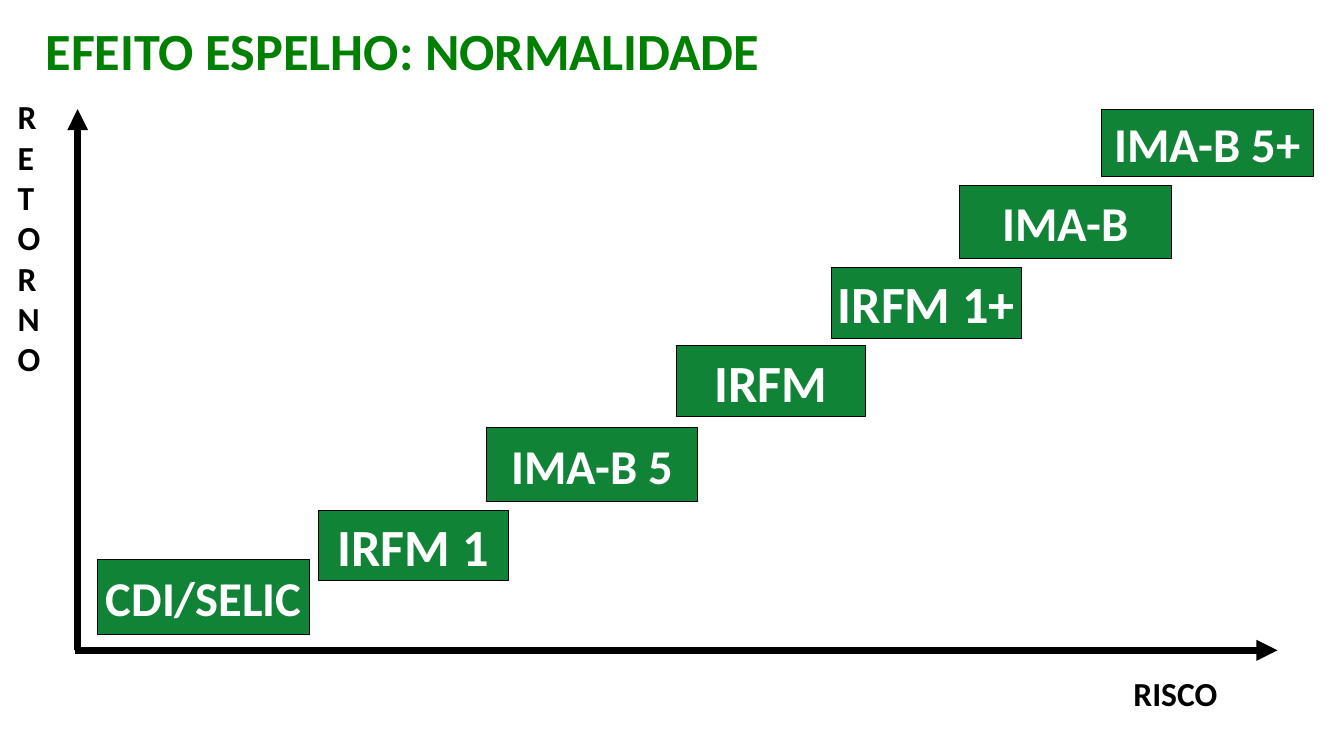
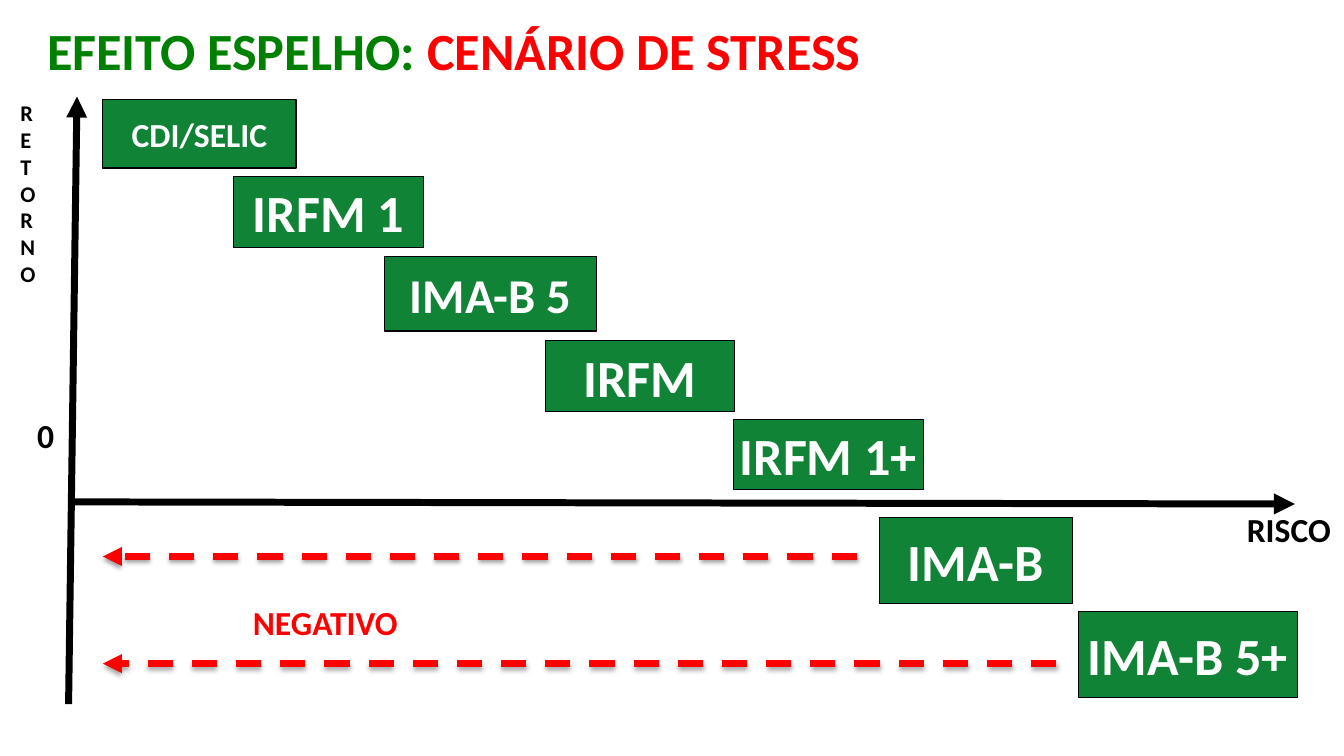
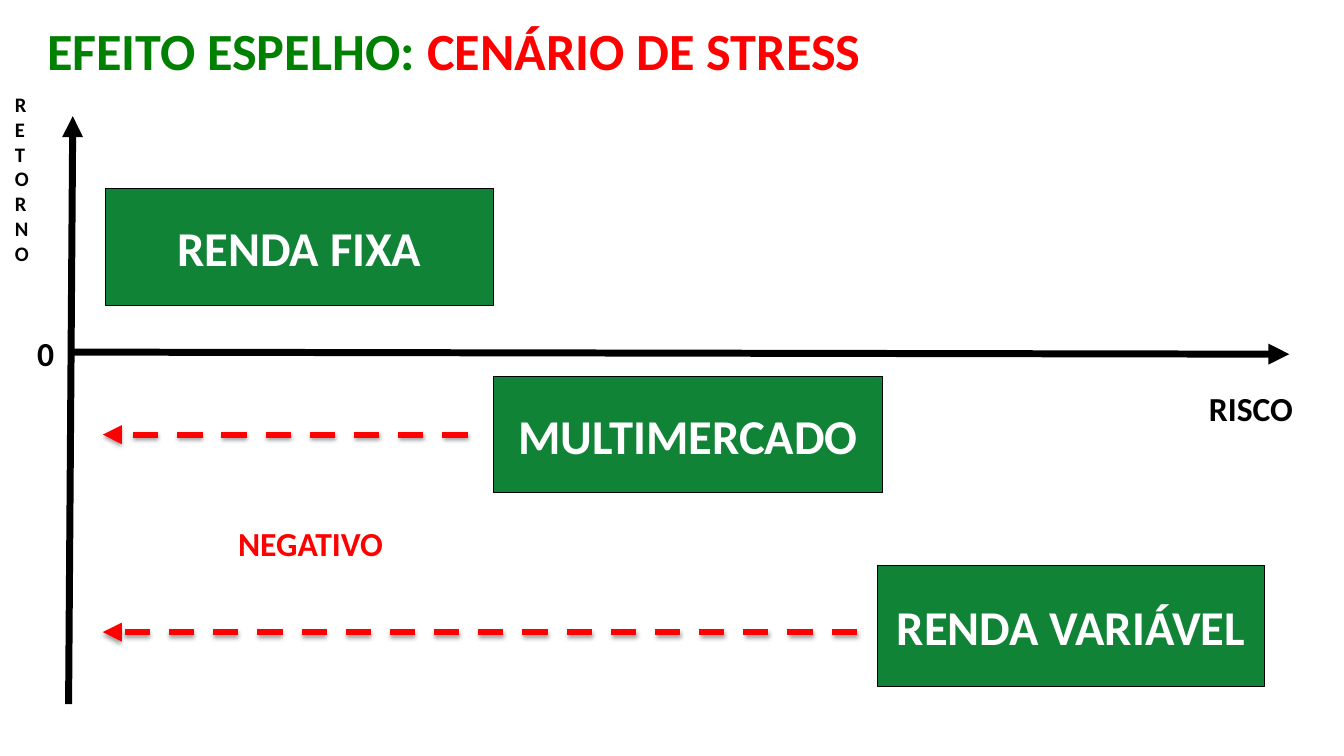
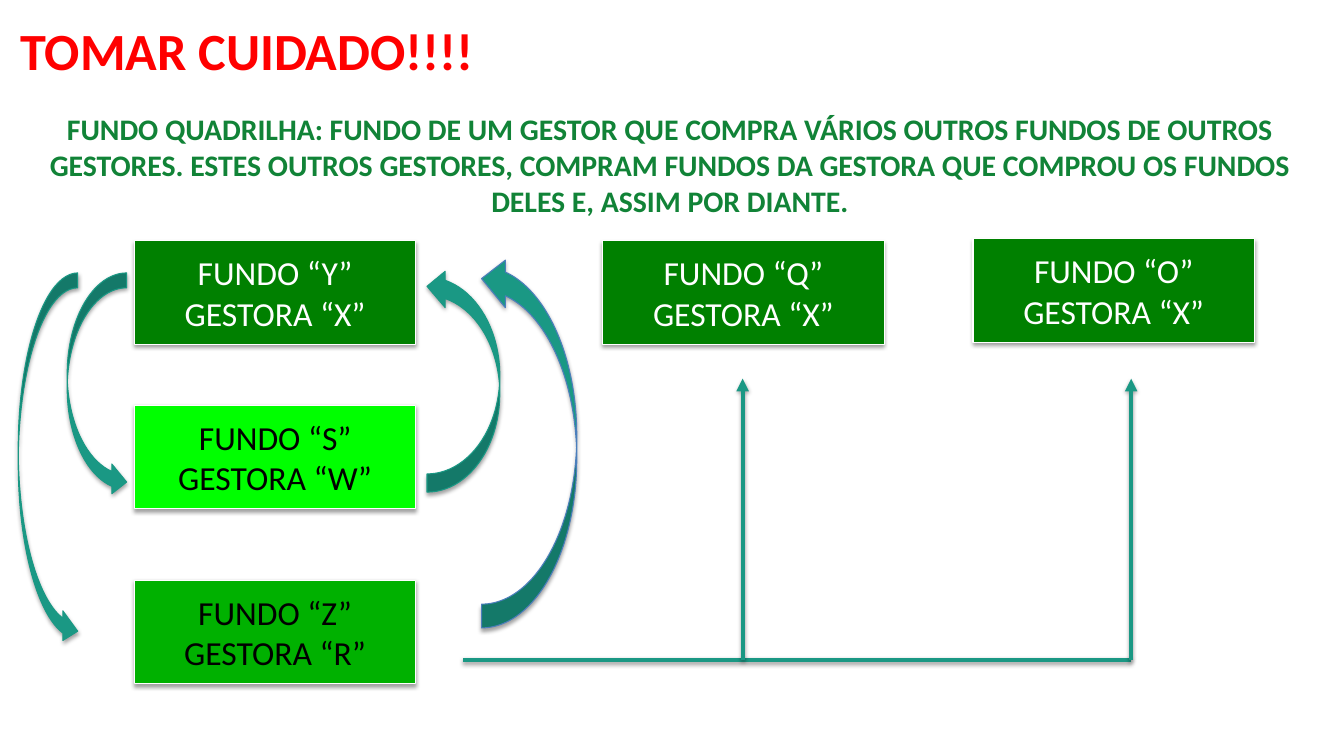
from dataclasses import dataclass
from typing import NamedTuple

from lxml import etree
from pptx import Presentation
from pptx.dml.color import RGBColor
from pptx.enum.dml import MSO_LINE
from pptx.enum.shapes import MSO_CONNECTOR, MSO_SHAPE
from pptx.enum.text import MSO_ANCHOR, MSO_AUTO_SIZE, PP_ALIGN
from pptx.oxml.ns import qn
from pptx.util import Pt

RECT, CURVE = MSO_SHAPE.RECTANGLE, MSO_SHAPE.CURVED_RIGHT_ARROW
STRAIGHT, DASH = MSO_CONNECTOR.STRAIGHT, MSO_LINE.DASH
LEFT, CENTER = PP_ALIGN.LEFT, PP_ALIGN.CENTER
TOP, MIDDLE = MSO_ANCHOR.TOP, MSO_ANCHOR.MIDDLE


@dataclass(frozen=True)
class Theme:
    font: str = "Calibri"
    big: float = 37.3
    mid: float = 34.7
    body: float = 24
    lead: float = 21.3
    small: float = 16
    tiny: float = 14.7
    black: str = "000000"
    white: str = "FFFFFF"
    red: str = "FF0000"
    green: str = "008000"
    card: str = "118337"
    lime: str = "00FF00"
    leaf: str = "00B100"
    teal: str = "1A9884"
    blue: str = "4B7EBC"


T = Theme()


class Box(NamedTuple):
    x: float
    y: float
    w: float
    h: float

    def sub(self, x, y, w, h):
        """Turn a place inside this box into a place on the slide."""
        return Box(self.x + x, self.y + y, w, h)


WIDE, SLIM = (151, 53), (135.5, 50.5)


def rgb(code):
    return RGBColor.from_string(code)


def pts(*vals):
    return [Pt(v) for v in vals]


def frame(shape, anchor, wrap):
    tf = shape.text_frame
    tf.auto_size = MSO_AUTO_SIZE.NONE
    tf.word_wrap, tf.vertical_anchor = wrap, anchor
    tf.margin_left = tf.margin_right = Pt(9.6)
    tf.margin_top = tf.margin_bottom = Pt(4.8)
    return tf


def style(para, size, color, align=LEFT, bold=True):
    para.alignment = align
    font = para.font
    font.name, font.size, font.bold = T.font, Pt(size), bold
    font.color.rgb = rgb(color)


def write(shape, text, size, color, align=LEFT, anchor=TOP, wrap=False, bold=True):
    tf = frame(shape, anchor, wrap)
    tf.text = text
    for para in tf.paragraphs:
        style(para, size, color, align, bold)


def label(slide, box, text, size=T.body, color=T.black, **kw):
    write(slide.shapes.add_textbox(*pts(*box)), text, size, color, **kw)


def effects(shape, shade):
    """Replace the theme's effects by a soft shadow, or by none."""
    props = shape._element.spPr
    for old in props.findall(qn("a:effectLst")):
        props.remove(old)
    effect = etree.SubElement(props, qn("a:effectLst"))
    if shade:
        drop = etree.SubElement(effect, qn("a:outerShdw"), blurRad=str(Pt(3.1)),
                                dist=str(Pt(1.7)), dir="5400000", rotWithShape="0")
        color = etree.SubElement(drop, qn("a:srgbClr"), val=T.black)
        etree.SubElement(color, qn("a:alpha"), val="36000")


def solid(slide, kind, box, fill, edge, shade=False):
    shape = slide.shapes.add_shape(kind, *pts(*box))
    shape.fill.solid()
    shape.fill.fore_color.rgb = rgb(fill)
    shape.line.color.rgb = rgb(edge)
    shape.line.width = Pt(0.75)
    effects(shape, shade)
    return shape


def line(slide, start, end, color, width, head=True, dash=False, shade=False):
    link = slide.shapes.add_connector(STRAIGHT, *pts(*start, *end))
    link.line.color.rgb = rgb(color)
    link.line.width = Pt(width)
    if dash:
        link.line.dash_style = DASH
    if head:
        stroke = link._element.spPr.find(qn("a:ln"))
        etree.SubElement(stroke, qn("a:tailEnd"), type="triangle")
    effects(link, shade)


def start_slide(deck, x, *parts):
    """Add a slide whose title is made of (text, color) parts."""
    slide = deck.slides.add_slide(deck.slide_layouts[5])
    title = slide.shapes.title
    title.left, title.top, title.width, title.height = pts(x, 8.6, 680, 54)
    para = frame(title, TOP, False).paragraphs[0]
    style(para, T.big, parts[0][1])
    for text, color in parts:
        run = para.add_run()
        run.text = text
        if color != parts[0][1]:
            run.font.color.rgb = rgb(color)
    return slide


def axes(slide, box, zero, lean=0, start=0, drop=0):
    """Draw both axes; zero is how far the risk axis lies below the top."""
    x, y, w, h = box
    line(slide, (x, y + h), (x + lean, y), T.black, 5)
    line(slide, (x + start, y + zero), (x + w, y + zero + drop), T.black, 5)


def names(slide, box, gain, size, risk):
    """Name the return axis, letter under letter, and the risk axis."""
    label(slide, box.sub(*gain, 34, size * 8.7 + 10), "\n".join("RETORNO"), size)
    label(slide, box.sub(*risk, 78, 38), "RISCO")


def cards(slide, box, items):
    for text, x, y, (w, h), size in items:
        card = solid(slide, RECT, box.sub(x, y, w, h), T.card, T.black)
        write(card, text, size, T.white, CENTER, MIDDLE)


def losses(slide, box, zero, word, arrows):
    """Mark the zero level and the dashed arrows of the negative part."""
    label(slide, box.sub(-32, zero, 30, 38), "0")
    label(slide, box.sub(*word, 294, 38), "NEGATIVO", color=T.red)
    for far, y in arrows:
        line(slide, (box.x + far, box.y + y), (box.x + 24.5, box.y + y),
             T.red, 4.5, dash=True, shade=True)


def normal(deck):
    slide = start_slide(deck, 23, ("EFEITO ESPELHO: NORMALIDADE", T.green))
    plot = Box(55.5, 78, 857, 386.5)
    axes(slide, plot, plot.h, start=-2)
    names(slide, plot, (-52.5, -14), T.body, (744.5, 398))
    cards(slide, plot, [
        ("CDI/SELIC", 14.5, 322, WIDE, T.mid),
        ("IRFM 1", 172, 286.5, SLIM, T.big),
        ("IMA-B 5", 292, 227.5, WIDE, T.mid),
        ("IRFM", 427.5, 169, SLIM, T.big),
        ("IRFM 1+", 538.5, 113, SLIM, T.big),
        ("IMA-B", 630, 54.5, (151, 52), T.mid),
        ("IMA-B 5+", 731.5, 0, (151, 48), T.mid),
    ])


def stress(deck):
    return start_slide(deck, 24, ("EFEITO ESPELHO: ", T.green),
                       ("CENÁRIO DE STRESS", T.red))


def indexes(deck):
    slide = stress(deck)
    plot = Box(49, 69, 876, 434)
    axes(slide, plot, 289.5, lean=6, start=4, drop=1.5)
    names(slide, plot, (-44, -3), T.small, (832, 290))
    cards(slide, plot, [
        ("CDI/SELIC", 24.5, 2, (138, 49), T.body),
        ("IRFM 1", 118, 57, SLIM, T.big),
        ("IMA-B 5", 226, 114.5, WIDE, T.mid),
        ("IRFM", 340.5, 174.5, SLIM, T.big),
        ("IRFM 1+", 475, 230.5, SLIM, T.big),
        ("IMA-B", 579, 301, (138, 61), T.big),
        ("IMA-B 5+", 721.5, 367.5, (156, 62), T.big),
    ])
    losses(slide, plot, 222.5, (122, 356), [(563, 328.5), (705.5, 405)])


def classes(deck):
    slide = stress(deck)
    plot = Box(49, 83, 872, 420)
    axes(slide, plot, 168.5, lean=3, drop=1.5)
    names(slide, plot, (-48, -22), T.tiny, (805, 189))
    cards(slide, plot, [
        ("RENDA FIXA", 26.5, 51.5, (277, 83.5), T.mid),
        ("MULTIMERCADO", 303.5, 186, (278, 83), T.mid),
        ("RENDA VARIÁVEL", 578, 321, (276, 86.5), T.mid),
    ])
    losses(slide, plot, 150, (111.5, 285.5), [(563, 368.5), (285, 227.5)])


def funds(slide, box):
    for fund, firm, x, y, fill, ink in [
        ("Y", "X", 0, 1.5, T.green, T.white),
        ("S", "W", 0, 119, T.lime, T.black),
        ("Z", "R", 0, 244, T.leaf, T.black),
        ("Q", "X", 334.5, 1.5, T.green, T.white),
        ("O", "X", 599, 0, T.green, T.white),
    ]:
        card = solid(slide, RECT, box.sub(x, y, 201, 74), fill, T.white, True)
        write(card, f"FUNDO “{fund}” GESTORA “{firm}”", T.body, ink,
              CENTER, MIDDLE, wrap=True, bold=False)


def flows(slide, box):
    for x, y, w, h, turn, edge in [
        (-48, 24.5, 42.5, 160, 0, T.teal),
        (-83, 24.5, 42.5, 266.5, 0, T.teal),
        (248, 11.5, 68, 266.5, 180, T.blue),
        (209, 21, 52, 160, 180, T.teal),
    ]:
        arc = solid(slide, CURVE, box.sub(x, y, w, h), T.teal, edge, True)
        arc.rotation = turn
    base, top = box.y + 301, box.y + 100
    left, near, far = box.x + 235, box.x + 434.5, box.x + 712
    line(slide, (left, base), (far, base), T.teal, 3, head=False, shade=True)
    for x in (near, far):
        line(slide, (x, base), (x, top), T.teal, 3, shade=True)


def warning(deck):
    slide = start_slide(deck, 5, ("TOMAR CUIDADO!!!!", T.red))
    label(slide, Box(18, 74.5, 921, 86),
          "FUNDO QUADRILHA: FUNDO DE UM GESTOR QUE COMPRA VÁRIOS OUTROS FUNDOS "
          "DE OUTROS GESTORES. ESTES OUTROS GESTORES, COMPRAM FUNDOS DA GESTORA "
          "QUE COMPROU OS FUNDOS DELES E, ASSIM POR DIANTE.",
          T.lead, T.card, align=CENTER, wrap=True)
    area = Box(96, 170.5, 800, 318)
    funds(slide, area)
    flows(slide, area)


def main():
    deck = Presentation()
    deck.slide_width, deck.slide_height = pts(960, 540)
    for build in (normal, indexes, classes, warning):
        build(deck)
    deck.save("out.pptx")


if __name__ == "__main__":
    main()
